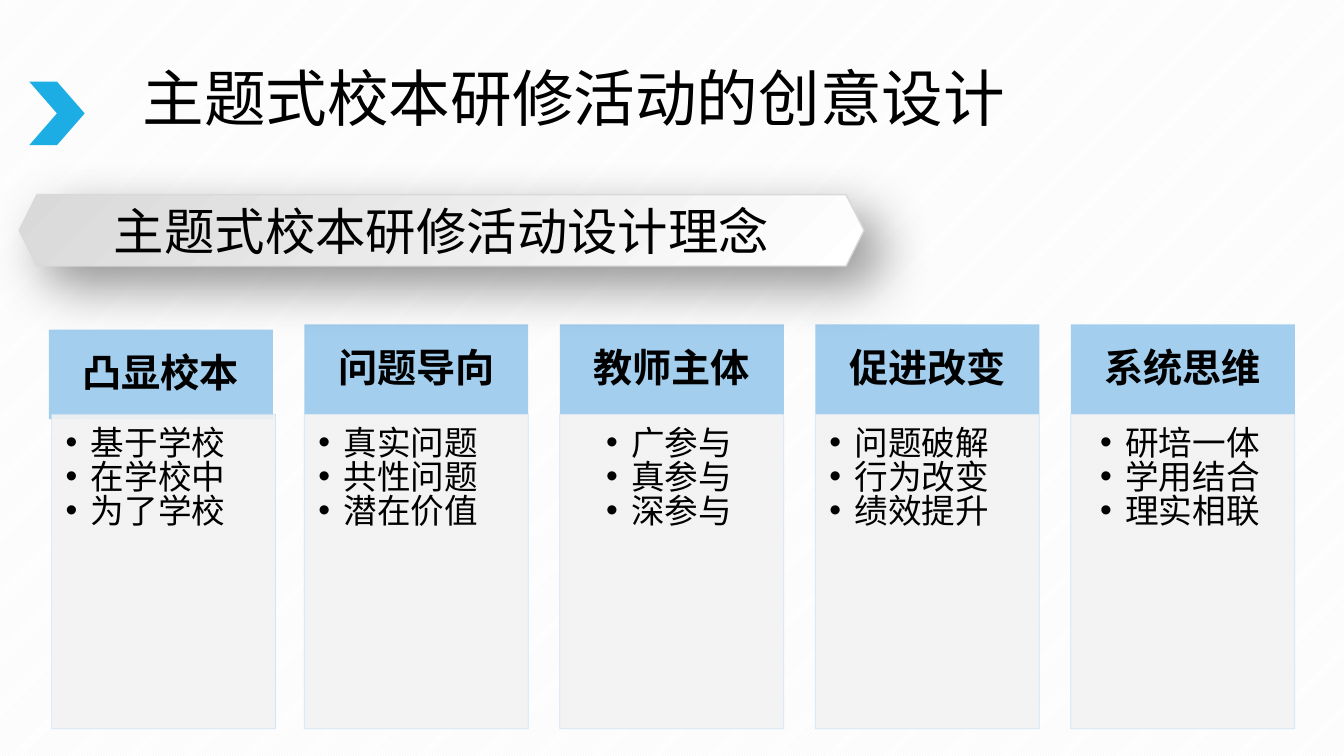
from lxml import etree
from pptx import Presentation
from pptx import util as u
from pptx.dml.color import RGBColor
from pptx.enum import dml, shapes, text
from pptx.oxml.ns import qn

Pt = u.Pt
FONT = "Noto Sans CJK SC"
HUES = {"ink": "000000", "arrow": "1CADE4", "head": "A3CEED", "body": "F2F2F2",
        "edge": "CDE3F5", "grey": "D9D9D9", "white": "FFFFFF"}
LEFT, CENTER = text.PP_ALIGN.LEFT, text.PP_ALIGN.CENTER
COLUMNS = [
    ("凸显校本", LEFT, ["基于学校", "在学校中", "为了学校"]),
    ("问题导向", LEFT, ["真实问题", "共性问题", "潜在价值"]),
    ("教师主体", CENTER, ["广参与", "真参与", "深参与"]),
    ("促进改变", LEFT, ["问题破解", "行为改变", "绩效提升"]),
    ("系统思维", CENTER, ["研培一体", "学用结合", "理实相联"]),
]


def rgb(hue):
    return RGBColor.from_string(HUES[hue])


def sub(node, tag, **attrs):
    return etree.SubElement(node, qn(tag), attrs)


class Deck:
    def __init__(self):
        self.prs = Presentation()
        self.prs.slide_width, self.prs.slide_height = Pt(960), Pt(540)
        self.slide = self.prs.slides.add_slide(self.prs.slide_layouts[6])

    def paper(self):
        """Fill the background with faint diagonal stripes."""
        fill = self.slide.background.fill
        fill.patterned()
        fill.pattern = dml.MSO_PATTERN.LIGHT_UPWARD_DIAGONAL
        fill.fore_color.rgb, fill.back_color.rgb = rgb("body"), rgb("white")

    def shape(self, kind, box, hue, edge=None, width=1):
        item = self.slide.shapes.add_shape(kind, *map(Pt, box))
        item.shadow.inherit = False
        item.fill.solid()
        item.fill.fore_color.rgb = rgb(hue)
        if edge:
            item.line.color.rgb, item.line.width = rgb(edge), Pt(width)
        else:
            item.line.fill.background()
        return item

    def label(self, box):
        return self.slide.shapes.add_textbox(*map(Pt, box))

    def words(self, item, lines, size, align=CENTER, bold=False, pitch=0.9,
              inset=(0, 0, 0, 0), top=False, bullet=False):
        """Put one paragraph per line into a shape or text box."""
        frame = item.text_frame
        frame.word_wrap = True
        frame.vertical_anchor = text.MSO_ANCHOR.TOP if top else text.MSO_ANCHOR.MIDDLE
        (frame.margin_left, frame.margin_top,
         frame.margin_right, frame.margin_bottom) = map(Pt, inset)
        frame.text = "\n".join(lines)
        for para in frame.paragraphs:
            para.alignment, para.line_spacing = align, pitch
            font = para.font
            font.name, font.size, font.bold = FONT, Pt(size), bold
            font.color.rgb = rgb("ink")
            props = para._p.pPr
            base = props.find(qn("a:defRPr"))
            sub(base, "a:ea", typeface=FONT)
            if bullet:
                props.set("marL", str(Pt(18)))
                props.set("indent", str(-Pt(18)))
                base.addprevious(sub(props, "a:buFont", typeface="Arial"))
                base.addprevious(sub(props, "a:buChar", char="•"))

    def fade(self, item, share):
        """Set the opacity, in percent, of a shape's fill and line."""
        for node in item._element.spPr.iter(qn("a:srgbClr")):
            sub(node, "a:alpha", val=str(share * 1000))

    def banner(self, box, line):
        item = self.shape(shapes.MSO_SHAPE.HEXAGON, box, "white", "grey")
        item.fill.gradient()
        item.fill.gradient_angle = 135
        for stop, hue, place in zip(item.fill.gradient_stops, ("white", "grey"), (0, 1)):
            stop.color.rgb, stop.position = rgb(hue), place
        glow = sub(item._element.spPr.find(qn("a:effectLst")), "a:outerShdw",
                   blurRad=str(Pt(38)), dist=str(Pt(19)), dir="2700000",
                   algn="tl", rotWithShape="0")
        tint = sub(glow, "a:srgbClr", val=HUES["ink"])
        sub(tint, "a:alpha", val="42000")
        self.words(item, [line], 36, pitch=1)

    def column(self, left, head, align, points, shift=(0, 0)):
        """Draw a headed list; shift moves the body right and the head down."""
        right, down = shift
        rect = shapes.MSO_SHAPE.RECTANGLE
        top = self.shape(rect, (left, 231.8 + down, 160, 64), "head")
        self.words(top, [head], 28, bold=True, inset=(16, 9, 16, 9))
        body = self.shape(rect, (left + right, 295.9, 160, 224.6), "body", "edge", 0.5)
        self.fade(body, 90)
        self.words(body, points, 24, align, pitch=0.84, top=True, bullet=True,
                   inset=(10, 10, 14, 15))


def main():
    deck = Deck()
    deck.paper()
    deck.shape(shapes.MSO_SHAPE.CHEVRON, (20.9, 58.3, 39.6, 45.4), "arrow")
    deck.words(deck.label((81.4, 46.8, 657.4, 51)), ["主题式校本研修活动的创意设计"], 44)
    for i, (head, align, points) in enumerate(COLUMNS):
        shift = (0, 0) if i else (2, 3.6)
        deck.column(34.9 + 182.5 * i, head, align, points, shift)
    deck.banner((13.7, 139, 603.4, 51), "主题式校本研修活动设计理念")
    deck.prs.save("out.pptx")


if __name__ == "__main__":
    main()
